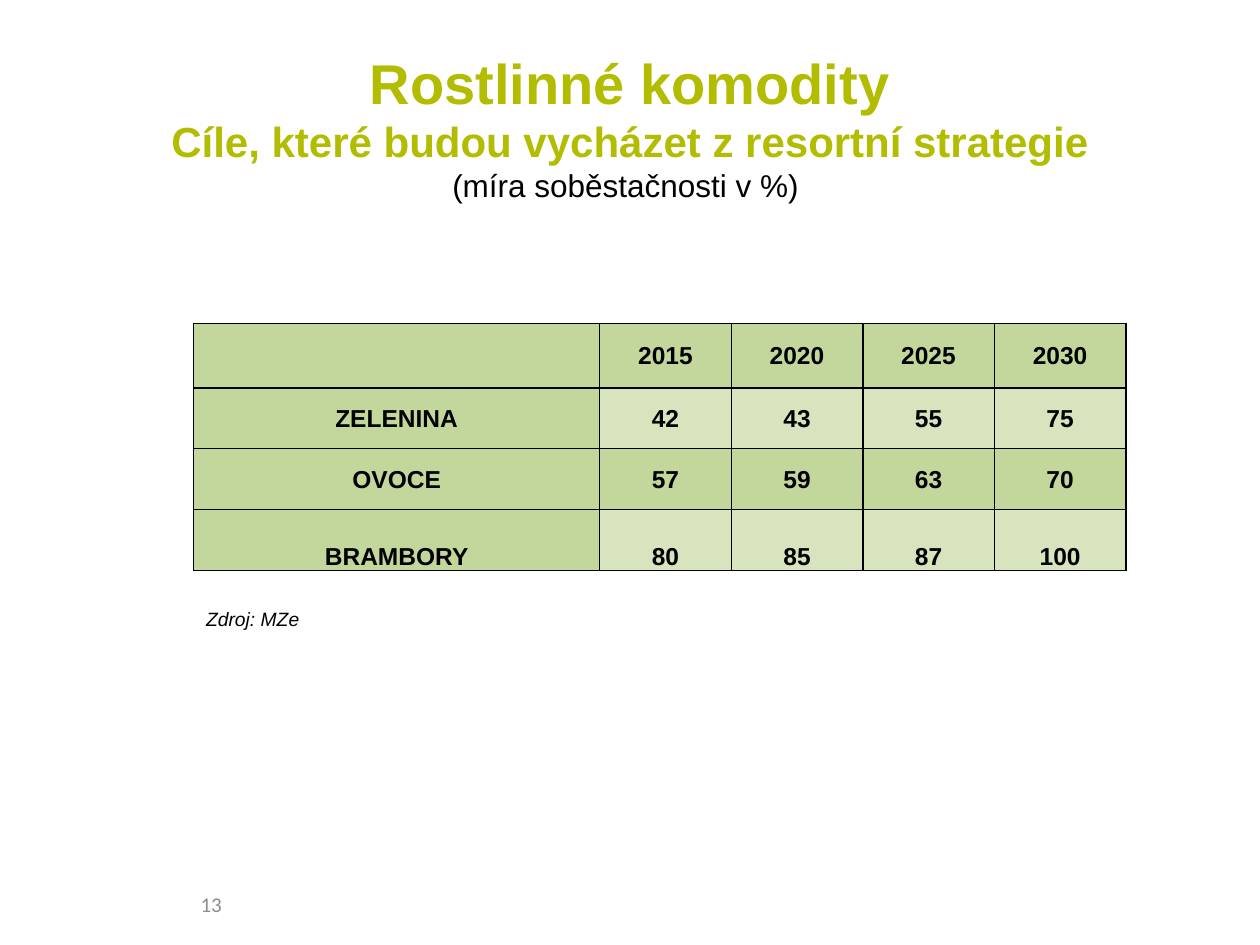
from lxml import etree
from pptx import Presentation
from pptx.dml.color import RGBColor
from pptx.enum.text import MSO_ANCHOR as Anchor, PP_ALIGN as Align
from pptx.oxml.ns import qn
from pptx.util import Pt

COLORS = {
    "lime": "B2BC00",
    "black": "000000",
    "gray": "8C8C8C",
    "green": "C3D69B",
    "pale": "D7E4BD",
}
HEADER = ["", "2015", "2020", "2025", "2030"]
ROWS = [
    ["ZELENINA", "42", "43", "55", "75"],
    ["OVOCE", "57", "59", "63", "70"],
    ["BRAMBORY", "80", "85", "87", "100"],
]
COLUMN_WIDTHS = [232] + [75.2] * 4
ROW_HEIGHTS = [36.6] + [34.8] * 3


def color(name):
    return RGBColor.from_string(COLORS[name])


def style(font, size, tint="black", name="Arial", bold=False, italic=False):
    font.name, font.size = name, Pt(size)
    font.bold, font.italic = bold, italic
    font.color.rgb = color(tint)


def add_text(page, box, text, align=Align.LEFT, anchor=Anchor.TOP):
    frame = page.shapes.add_textbox(*map(Pt, box)).text_frame
    frame.word_wrap = True
    frame.vertical_anchor = anchor
    frame.text = text
    para = frame.paragraphs[0]
    para.alignment = align
    return para


def add_title(page, box):
    lines = [
        ("Rostlinné komodity", 32, "lime", True),
        ("Cíle, které budou vycházet z resortní strategie", 24, "lime", True),
        ("(míra soběstačnosti v %) ", 18, "black", False),
    ]
    text = "\v".join(line[0] for line in lines)
    para = add_text(page, box, text, Align.CENTER, Anchor.MIDDLE)
    for span, (_, size, tint, bold) in zip(para.runs, lines):
        style(span.font, size, tint, bold=bold)


def add_borders(cell):
    """Draw a thin black line on each side; lines must precede the fill."""
    props = cell._tc.get_or_add_tcPr()
    for index, side in enumerate(("a:lnL", "a:lnR", "a:lnT", "a:lnB")):
        line = etree.Element(qn(side), w=str(Pt(1)))
        fill = etree.SubElement(line, qn("a:solidFill"))
        etree.SubElement(fill, qn("a:srgbClr"), val=COLORS["black"])
        props.insert(index, line)


def add_commodity_table(page, box):
    data = [HEADER] + ROWS
    table = page.shapes.add_table(len(data), len(HEADER), *map(Pt, box)).table
    for column, width in zip(table.columns, COLUMN_WIDTHS):
        column.width = Pt(width)
    for row, height in zip(table.rows, ROW_HEIGHTS):
        row.height = Pt(height)

    for r, values in enumerate(data):
        for c, value in enumerate(values):
            cell = table.cell(r, c)
            cell.margin_left = cell.margin_right = cell.margin_top = Pt(0.7)
            cell.margin_bottom = 0
            last = r == len(data) - 1
            cell.vertical_anchor = Anchor.BOTTOM if last else Anchor.MIDDLE
            cell.text = value
            para = cell.text_frame.paragraphs[0]
            para.alignment = Align.CENTER
            style(para.font, 14, bold=True)
            for span in para.runs:
                style(span.font, 14, bold=True)
            # Odd body rows are paler, except for the label column
            cell.fill.solid()
            cell.fill.fore_color.rgb = color("pale" if r % 2 and c else "green")
            add_borders(cell)


def add_source(page, box):
    para = add_text(page, box, "Zdroj: MZe")
    style(para.runs[0].font, 11, italic=True)


def add_page_number(page, box):
    para = add_text(page, box, "13", Align.CENTER, Anchor.MIDDLE)
    style(para.runs[0].font, 12, "gray", "Calibri")


def main():
    deck = Presentation()
    deck.slide_width, deck.slide_height = Pt(720), Pt(540)
    page = deck.slides.add_slide(deck.slide_layouts[6])
    add_commodity_table(
        page, (110.7, 185, sum(COLUMN_WIDTHS), sum(ROW_HEIGHTS)))
    add_source(page, (110.7, 343.5, 108, 21))
    add_title(page, (36, 21.6, 648, 100.8))
    add_page_number(page, (36.7, 502.5, 168, 28.8))
    deck.save("out.pptx")


if __name__ == "__main__":
    main()
